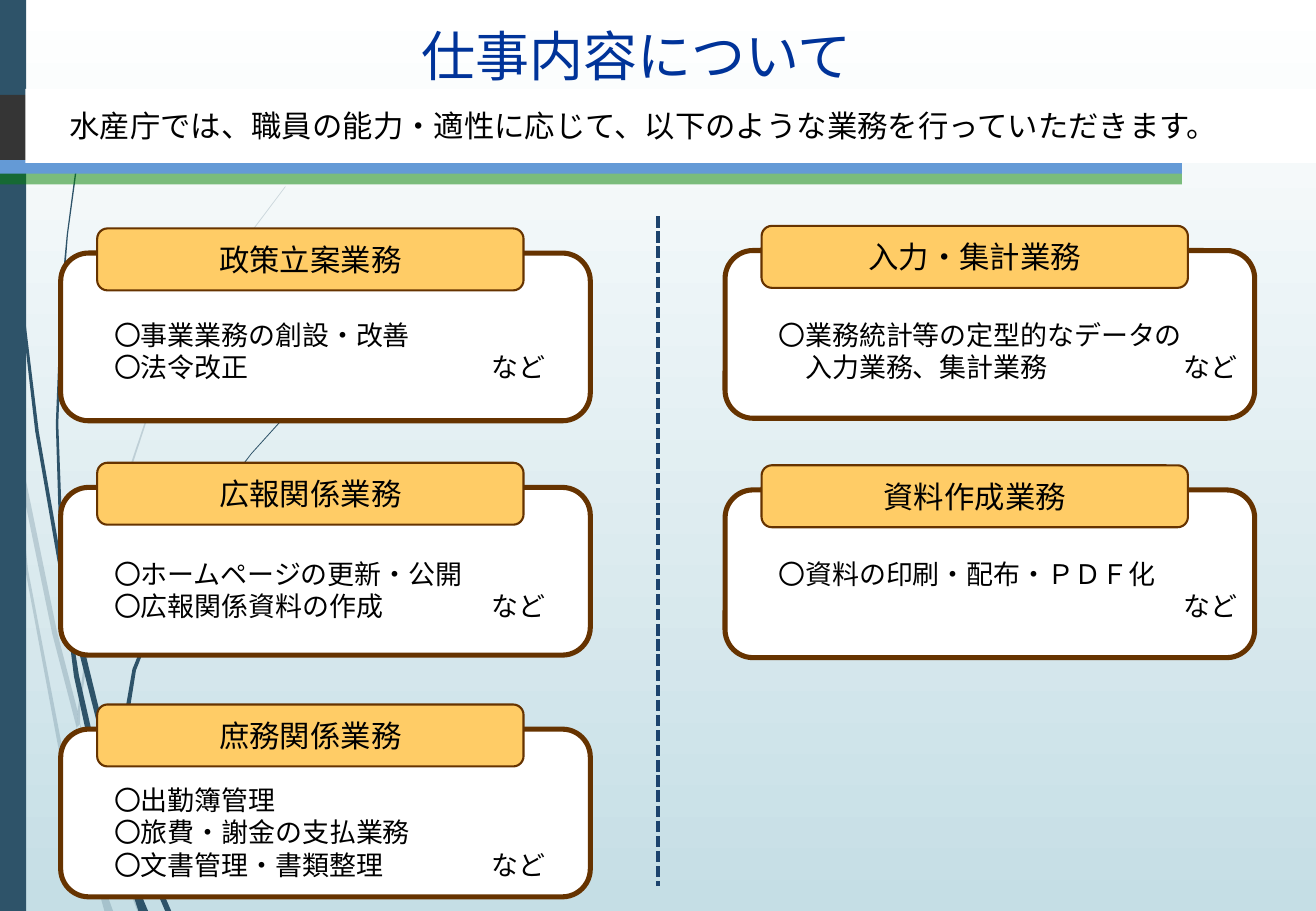
from lxml import etree
from pptx import Presentation
from pptx.dml.color import RGBColor
from pptx.enum import dml, shapes, text
from pptx.oxml import ns
from pptx.util import Pt

WHITE = RGBColor(0xFF, 0xFF, 0xFF)
BLACK = RGBColor(0x00, 0x00, 0x00)
MIST = RGBColor(0xC5, 0xDE, 0xE5)
SLATE = RGBColor(0x2E, 0x53, 0x69)
CHARCOAL = RGBColor(0x35, 0x35, 0x35)
GREEN = RGBColor(0x00, 0x80, 0x00)
BLUE = RGBColor(0x64, 0x9A, 0xD6)
TITLE_BLUE = RGBColor(0x00, 0x33, 0x99)
NAVY = RGBColor(0x1C, 0x43, 0x6D)
BROWN = RGBColor(0x66, 0x33, 0x00)
AMBER = RGBColor(0xFF, 0xCC, 0x66)

RECT = shapes.MSO_SHAPE.RECTANGLE
ROUND = shapes.MSO_SHAPE.ROUNDED_RECTANGLE
GOTHIC = "Noto Sans CJK JP"

# Grass blades: the points along one edge, then along the other
PALE_BLADES = [
    ([(7.9, 248.4), (33.8, 374.4), (46.1, 421.9)],
     [(9.4, 270.7), (31, 375.8), (45.4, 431.3)]),
    ([(47.5, 429.1), (49.7, 437), (69.1, 498.2), (84.2, 540)],
     [(47.5, 439.2), (66.2, 499.7), (81.4, 540)]),
    ([(50.4, 491.8), (54.7, 514.1), (61.9, 540)],
     [(50.4, 491.8), (56.9, 511.9), (67, 540)]),
    ([(5.8, 252), (9.4, 270.7), (16.6, 337.7), (37.4, 445.7), (50.4, 491.8), (54.7, 514.1)],
     [(5.8, 252), (15.1, 338.4), (35.3, 447.1), (49.7, 499), (54.7, 514.1)]),
    ([(45.4, 431.3), (47.5, 439.2), (49, 465.1), (56.9, 511.9)],
     [(45.4, 431.3), (46.8, 465.1), (50.4, 491.8), (56.9, 511.9)]),
    ([(47.5, 429.1), (47.5, 420.5), (59.8, 332.6), (86.4, 251.3), (123.8, 176.4),
      (145.4, 142.6), (169.2, 110.9)],
     [(45.4, 431.3), (46.1, 420.5), (58.3, 331.9), (85.7, 250.6), (123.1, 175.7),
      (145.4, 141.8), (169.2, 110.2)]),
]
DARK_BLADES = [
    ([(2.2, 0), (5, 78.5), (12.2, 167), (23, 255.6), (35.3, 326.2), (36.7, 346.3)],
     [(1.4, 0), (4.3, 79.2), (10.8, 167.8), (20.9, 255.6), (36, 343.4)]),
    ([(38.9, 339.8), (59.8, 424.8), (68.4, 454.3), (68.4, 464.4)],
     [(38.9, 339.8), (41, 363.6), (56.9, 426.2), (68.4, 464.4)]),
    ([(71.3, 461.5), (72.7, 467.3), (87.8, 508.3), (101.5, 540)],
     [(71.3, 472.3), (85, 509.8), (97.9, 540)]),
    ([(36.7, 343.4), (41, 363.6), (46.8, 400.3), (63.4, 473), (70.6, 497.5), (75.6, 519.8)],
     [(36.7, 343.4), (43.9, 401), (59.8, 474.5), (71.3, 509.8), (75.6, 519.8)]),
    ([(45.4, 101.5), (40.3, 139), (37.4, 176.4), (34.6, 251.3), (37.4, 326.2), (41, 363.6)],
     [(44.6, 101.5), (39.6, 139), (36, 176.4), (33.1, 251.3), (35.3, 323.3), (41, 363.6)]),
    ([(168.5, 247.7), (149, 269.3), (131.8, 292.3), (102.2, 342.7), (80.6, 397.4),
      (71.3, 455.8), (71.3, 461.5)],
     [(167.8, 247.7), (149, 268.6), (131, 291.6), (100.8, 341.3), (78.5, 396.7),
      (68.4, 454.3), (71.3, 461.5)]),
    ([(71.3, 497.5), (74.9, 508.3), (78.5, 517.7), (87.8, 540)],
     [(71.3, 497.5), (75.6, 519.8), (82.1, 540)]),
]

# Cards: left, top, heading, top of list, lines, tab stops
LEFT, RIGHT = 57.6, 451.4
CARDS = [
    (LEFT, 135.4, "政策立案業務", 185, ["〇事業業務の創設・改善", "〇法令改正\tなど"], [224]),
    (LEFT, 274.3, "広報関係業務", 327,
     ["〇ホームページの更新・公開", "〇広報関係資料の作成\tなど"], [224]),
    (LEFT, 417.6, "庶務関係業務", 460.8,
     ["〇出勤簿管理", "〇旅費・謝金の支払業務", "〇文書管理・書類整理\tなど"], [224]),
    (RIGHT, 133.9, "入力・集計業務", 185,
     ["〇業務統計等の定型的なデータの", "\t入力業務、集計業務\tなど"], [16, 240]),
    (RIGHT, 275.8, "資料作成業務", 327, ["〇資料の印刷・配布・ＰＤＦ化", "\tなど"], [240]),
]


class Slide:
    """Holds the page and draws each kind of element in one style."""

    def __init__(self, deck):
        self.page = deck.slides.add_slide(deck.slide_layouts[1])

    def backdrop(self, top_color, bottom_color):
        fill = self.page.background.fill
        fill.gradient()
        fill.gradient_angle = 270
        for stop, color in zip(fill.gradient_stops, (top_color, bottom_color)):
            stop.color.rgb = color

    def paint(self, shape, color, opacity=100, line=None, weight=0):
        shape.shadow.inherit = False
        shape.fill.solid()
        shape.fill.fore_color.rgb = color
        if opacity < 100:
            tint = shape.element.spPr.find(ns.qn("a:solidFill"))[0]
            etree.SubElement(tint, ns.qn("a:alpha"), val=str(opacity * 1000))
        if line is None:
            shape.line.fill.background()
        else:
            shape.line.color.rgb = line
            shape.line.width = Pt(weight)

    def blade(self, edge, other_edge, opacity):
        points = [(Pt(x), Pt(y)) for x, y in edge + other_edge[::-1]]
        builder = self.page.shapes.build_freeform(*points[0], scale=1.0)
        builder.add_line_segments(points[1:], close=True)
        self.paint(builder.convert_to_shape(), SLATE, opacity)

    def box(self, kind, left, top, width, height, color, **style):
        box = self.page.shapes.add_shape(kind, Pt(left), Pt(top), Pt(width), Pt(height))
        self.paint(box, color, **style)
        return box

    def fill_text(self, frame, lines, size, color=BLACK, align=text.PP_ALIGN.LEFT, font=GOTHIC):
        frame.text = "\n".join(lines)
        frame.word_wrap = True
        for para in frame.paragraphs:
            para.alignment = align
            para.space_before = Pt(0)
            for span in para.runs:
                span.font.size = Pt(size)
                span.font.color.rgb = color
                span.font.name = font
                etree.SubElement(span.font._element, ns.qn("a:ea"), typeface=GOTHIC)

    def placeholder(self, index, left, top, width, height, line, size, **style):
        holder = self.page.placeholders[index]
        holder.left, holder.top, holder.width, holder.height = map(Pt, (left, top, width, height))
        self.page.shapes.element.append(holder.element)  # bring to front
        frame = holder.text_frame
        self.fill_text(frame, [line], size, **style)
        frame.vertical_anchor = text.MSO_ANCHOR.MIDDLE
        return holder

    def lead(self, *place):
        holder = self.placeholder(1, *place)
        self.paint(holder, WHITE)
        frame = holder.text_frame
        frame.margin_left = frame.margin_right = frame.margin_top = frame.margin_bottom = 0
        props = frame.paragraphs[0]._p.get_or_add_pPr()
        props.set("marL", str(Pt(26)))
        props.set("indent", "0")
        etree.SubElement(props, ns.qn("a:buNone"))

    def divider(self, x, top, bottom):
        line = self.page.shapes.add_connector(
            shapes.MSO_CONNECTOR.STRAIGHT, Pt(x), Pt(top), Pt(x), Pt(bottom))
        line.line.color.rgb = NAVY
        line.line.width = Pt(2.25)
        line.line.dash_style = dml.MSO_LINE.SQUARE_DOT
        etree.SubElement(line.element.spPr, ns.qn("a:effectLst"))

    def card(self, left, top, heading, list_top, lines, stops):
        self.box(ROUND, left - 21.6, top + 14.6, 313.9, 99.4, WHITE, line=BROWN, weight=3)
        label = self.box(ROUND, left, top, 252.7, 36.7, AMBER, line=BROWN, weight=1.25)
        self.fill_text(label.text_frame, [heading], 18, align=text.PP_ALIGN.CENTER)
        label.text_frame.vertical_anchor = text.MSO_ANCHOR.MIDDLE
        area = self.page.shapes.add_textbox(
            Pt(left + 2.9), Pt(list_top), Pt(289.4), Pt(7.2 + 19.4 * len(lines)))
        self.fill_text(area.text_frame, lines, 16)
        props = area.text_frame.paragraphs[-1]._p.get_or_add_pPr()
        tabs = etree.SubElement(props, ns.qn("a:tabLst"))
        for stop in stops:
            etree.SubElement(tabs, ns.qn("a:tab"), pos=str(Pt(stop)), algn="l")


def main():
    deck = Presentation()
    deck.slide_width, deck.slide_height = Pt(780), Pt(540)
    slide = Slide(deck)

    # Background and side decoration
    slide.backdrop(WHITE, MIST)
    for blades, opacity in ((PALE_BLADES, 20), (DARK_BLADES, 100)):
        for edge, other_edge in blades:
            slide.blade(edge, other_edge, opacity)
    slide.box(RECT, 0, 0, 15.5, 540, SLATE)
    slide.box(RECT, 0, 56.2, 116, 40, CHARCOAL)

    # Heading with its two bars
    slide.box(RECT, -1.4, 100.8, 702, 8.6, GREEN, opacity=50)
    slide.box(RECT, -1.4, 95, 702, 7.9, BLUE)
    slide.placeholder(0, 15.1, 9.4, 724.3, 46.1, "仕事内容について", 32,
                      color=TITLE_BLUE, align=text.PP_ALIGN.CENTER, font="Arial")
    slide.lead(15.1, 52.6, 765, 43.9,
               "水産庁では、職員の能力・適性に応じて、以下のような業務を行っていただきます。", 18)

    # Cards on both sides of the divider
    slide.divider(390, 128.2, 524.9)
    for card in CARDS:
        slide.card(*card)

    deck.save("out.pptx")


if __name__ == "__main__":
    main()
